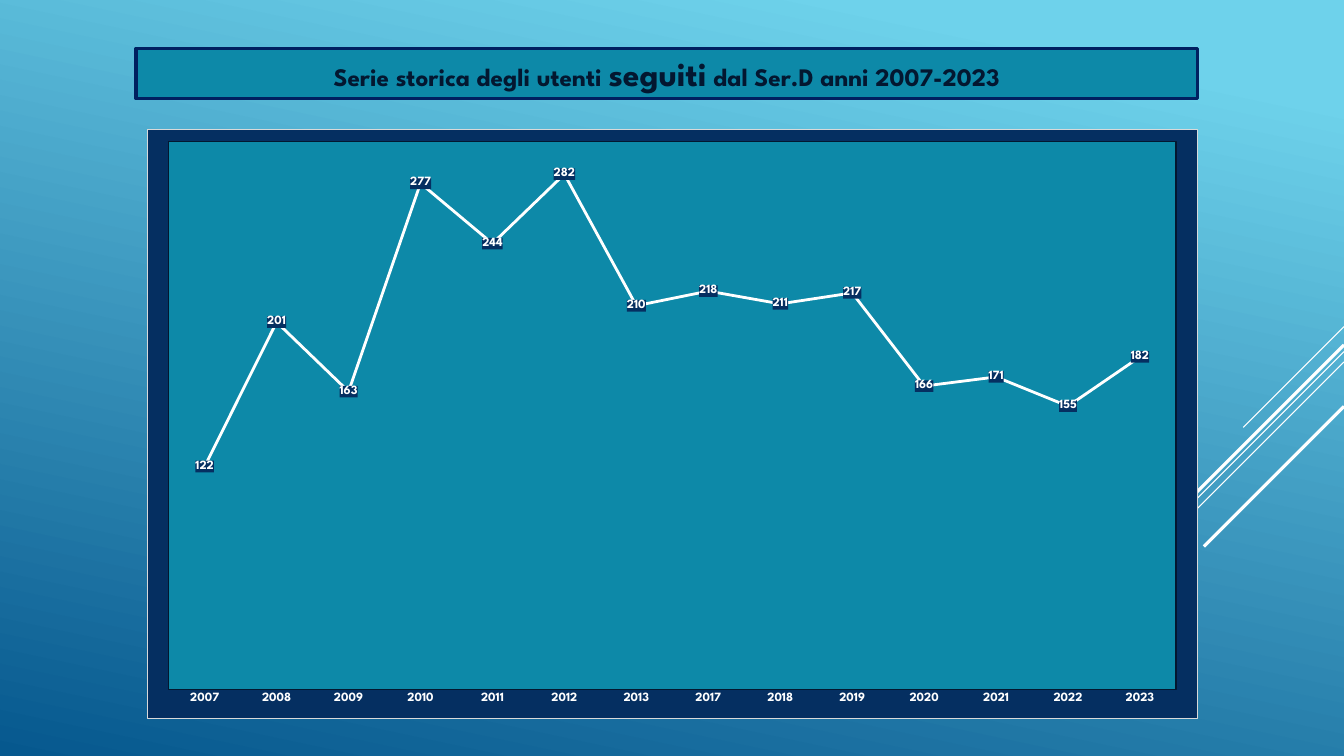
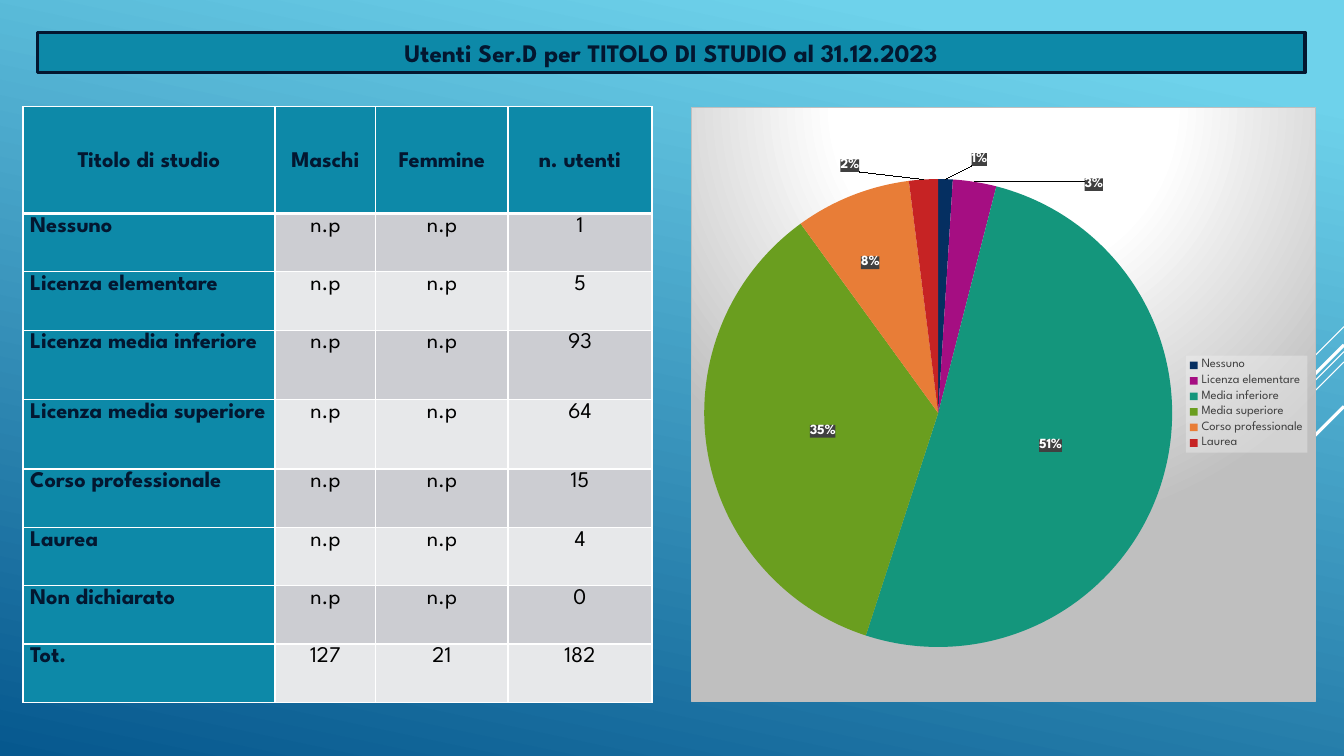
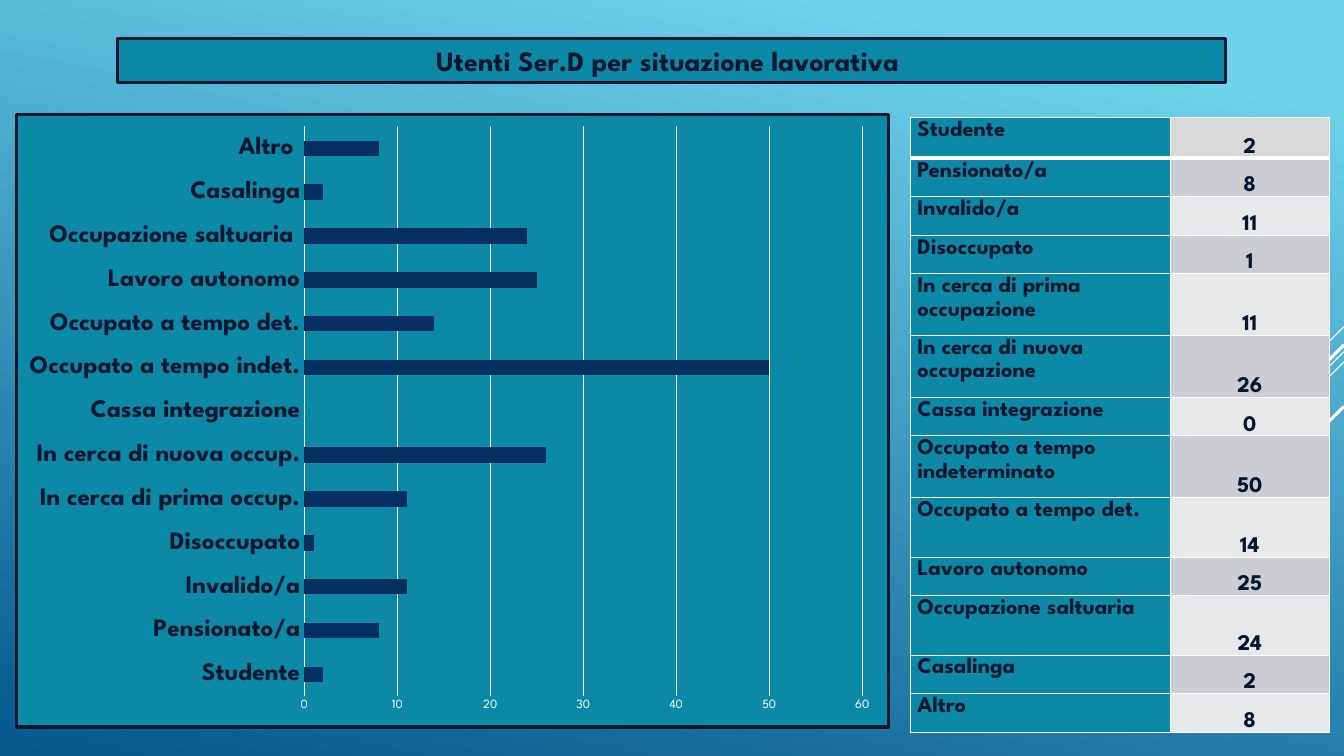
import copy
import functools

import pptx
import pptx.chart.data
import pptx.dml.color
import pptx.enum.chart
import pptx.enum.dml
import pptx.enum.shapes
import pptx.enum.text
import pptx.oxml
import pptx.util

Cm = pptx.util.Cm
Pt = pptx.util.Pt
Rgb = pptx.dml.color.RGBColor.from_string
Kind = pptx.enum.chart.XL_CHART_TYPE
Align = pptx.enum.text.PP_ALIGN
Anchor = pptx.enum.text.MSO_ANCHOR


class Theme:
    face = "League Spartan"
    teal, navy, ink = "0D89A8", "052F61", "031730"
    white, black, gray = "FFFFFF", "000000", "404040"
    sky, deep, edge = "6ED2EB", "06588E", "002060"
    bands = ("E7E8EA", "CCCDD2")
    pale, frame, rim = "D9D9D9", "BFBFBF", "D9D9D9"
    slices = ("052F61", "A50E82", "14967C", "6A9E1F", "E87D37", "C62324")
    tiny, small, cell, head, big, huge = 9, 10, 16, 18, 20, 24
    thin, thick = 0.75, 2.25


def dress(item, **looks):
    for name, value in looks.items():
        *route, last = name.split("__")
        setattr(functools.reduce(getattr, route, item), last, value)


def node(text):
    spaces = " ".join(
        f'xmlns:{key}="http://schemas.openxmlformats.org/drawingml/2006/{end}"'
        for key, end in (("a", "main"), ("c", "chart"))
    )
    return pptx.oxml.parse_xml(f"<c:root {spaces}>{text}</c:root>")[0]


solid = '<a:solidFill><a:srgbClr val="{}"/></a:solidFill>'.format
glow = (
    '<a:gradFill><a:gsLst>'
    + "".join(
        f'<a:gs pos="{spot}"><a:srgbClr val="{tone}"/></a:gs>'
        for spot, tone in ((0, Theme.white), (39000, Theme.white), (100000, Theme.frame))
    )
    + '</a:gsLst><a:path path="circle">'
    '<a:fillToRect l="50000" t="-80000" r="50000" b="180000"/></a:path></a:gradFill>'
)

deck = pptx.Presentation()
dress(deck, slide_width=Cm(33.87), slide_height=Cm(19.05))
blank = deck.slide_layouts[6]

pages = [
    {
        "title": [("Serie storica degli utenti ", Theme.head), ("seguiti", Theme.huge),
                  (" dal Ser.D anni 2007-2023", Theme.head)],
        "bar": (3.43, 1.22, 26.75, 1.27), "edge": Theme.edge, "anchor": Anchor.TOP,
        "kind": Kind.LINE, "box": (3.71, 3.25, 26.47, 14.88),
        "plot": (0.02, 0.02, 0.96, 0.93),
        "fill": solid(Theme.navy), "rim": (Theme.rim, Theme.thin),
        "data": {"2007": 122, "2008": 201, "2009": 163, "2010": 277, "2011": 244,
                 "2012": 282, "2013": 210, "2017": 218, "2018": 211, "2019": 217,
                 "2020": 166, "2021": 171, "2022": 155, "2023": 182},
    },
    {
        "title": [("Utenti Ser.D per TITOLO DI STUDIO al 31.12.2023", Theme.head)],
        "bar": (0.94, 0.81, 31.95, 1.02), "edge": Theme.ink, "anchor": Anchor.MIDDLE,
        "kind": Kind.PIE, "box": (17.42, 2.69, 15.75, 14.99),
        "plot": (0.02, 0.12, 0.75, 0.79),
        "fill": glow, "rim": (Theme.frame, Theme.thin),
        "data": {"Nessuno": 1, "Licenza elementare ": 3, "Media inferiore": 51,
                 "Media superiore": 35, "Corso professionale": 8, "Laurea": 2},
    },
    {
        "title": [("Utenti Ser.D per situazione lavorativa ", Theme.big)],
        "bar": (2.97, 0.97, 27.91, 1.12), "edge": Theme.ink, "anchor": Anchor.TOP,
        "kind": Kind.BAR_CLUSTERED, "box": (0.38, 2.84, 22.05, 15.52),
        "plot": (0.33, 0.02, 0.64, 0.93),
        "fill": solid(Theme.teal), "rim": (Theme.ink, Theme.thick),
        "data": {"Studente": 2, "Pensionato/a": 8, "Invalido/a": 11, "Disoccupato": 1,
                 "In cerca di prima occup.": 11, "In cerca di nuova occup.": 26,
                 "Cassa integrazione": 0, "Occupato a tempo indet.": 50,
                 "Occupato a tempo det.": 14, "Lavoro autonomo": 25,
                 "Occupazione saltuaria ": 24, "Casalinga": 2, "Altro ": 8},
    },
]

slides, charts = [], []
for page in pages:
    slide = deck.slides.add_slide(blank)
    slides.append(slide)

    data = pptx.chart.data.CategoryChartData()
    data.categories = list(page["data"])
    data.add_series("Series 1", list(page["data"].values()))
    chart = slide.shapes.add_chart(page["kind"], *map(Cm, page["box"]), data).chart
    charts.append(chart)
    dress(chart, has_title=False, has_legend=False, font__name=Theme.face,
          font__size=Pt(Theme.small), font__color__rgb=Rgb(Theme.white))
    tone, width = page["rim"]
    chart.element.xpath("c:chart")[0].addnext(node(
        f'<c:spPr>{page["fill"]}<a:ln w="{Pt(width)}">{solid(tone)}</a:ln></c:spPr>'))
    area = chart.element.xpath("c:chart/c:plotArea")[0]
    for old in area.xpath("c:layout"):
        area.remove(old)
    sides = "".join(f'<c:{key} val="{part}"/>' for key, part in zip("xywh", page["plot"]))
    area.insert(0, node(
        '<c:layout><c:manualLayout><c:layoutTarget val="inner"/>'
        f'<c:xMode val="edge"/><c:yMode val="edge"/>{sides}</c:manualLayout></c:layout>'))

    bar = slide.shapes.add_shape(pptx.enum.shapes.MSO_SHAPE.RECTANGLE, *map(Cm, page["bar"]))
    bar.fill.solid()
    dress(bar, shadow__inherit=False, fill__fore_color__rgb=Rgb(Theme.teal),
          line__color__rgb=Rgb(page["edge"]), line__width=Pt(Theme.thick),
          text_frame__word_wrap=True, text_frame__vertical_anchor=page["anchor"],
          text_frame__auto_size=pptx.enum.text.MSO_AUTO_SIZE.SHAPE_TO_FIT_TEXT)
    line = bar.text_frame.paragraphs[0]
    line.alignment = Align.CENTER
    for text, size in page["title"]:
        run = line.add_run()
        dress(run, text=text, font__name=Theme.face, font__size=Pt(size),
              font__bold=True, font__color__rgb=Rgb(Theme.ink))

fill = blank.background.fill
fill.gradient()
fill.gradient_angle = 258
for stop, spot, tone in zip(fill.gradient_stops, (0.1, 1), (Theme.sky, Theme.deep)):
    dress(stop, position=spot, color__rgb=Rgb(tone))

for top, reach, width in ((8.23, 2.54, Theme.thin), (8.86, 8.29, Theme.thin),
                          (9.12, 5.27, Theme.thin), (8.69, 4.86, Theme.thick),
                          (10.24, 3.53, Theme.thick)):
    ray = slides[0].shapes.add_connector(
        pptx.enum.shapes.MSO_CONNECTOR.STRAIGHT,
        Cm(33.87), Cm(top), Cm(33.87 - reach), Cm(top + reach))
    dress(ray, line__color__rgb=Rgb(Theme.white), line__width=Pt(width))
    ray.element.spPr.append(node("<a:effectLst/>"))
    blank.shapes.element.append(ray.element)

trend, pie, work = charts
none = pptx.enum.chart.XL_TICK_MARK.NONE
for chart, size, tone, top in ((trend, Theme.tiny, Theme.white, 300),
                               (work, Theme.head, Theme.ink, 60)):
    dress(chart.plots[0], vary_by_categories=False)
    dress(chart.category_axis, major_tick_mark=none, has_major_gridlines=False,
          tick_labels__font__name=Theme.face, tick_labels__font__size=Pt(size),
          tick_labels__font__bold=True, tick_labels__font__color__rgb=Rgb(tone))
    dress(chart.value_axis, major_tick_mark=none, minimum_scale=0, maximum_scale=top,
          has_major_gridlines=chart is work)

trend.category_axis.format.line.fill.background()
trend.value_axis.visible = False
dress(trend.plots[0].series[0], smooth=False, format__line__width=Pt(2),
      format__line__color__rgb=Rgb(Theme.white))
trend.element.xpath("c:chart/c:plotArea")[0].append(node(
    f'<c:spPr>{solid(Theme.teal)}<a:ln w="{Pt(Theme.thin)}">{solid(Theme.ink)}</a:ln></c:spPr>'))

white = Rgb(Theme.white)
dress(work.category_axis.format.line, color__rgb=white, width=Pt(Theme.thin))
dress(work.value_axis, major_unit=10, tick_labels__font__name=Theme.face,
      tick_labels__font__size=Pt(Theme.tiny), tick_labels__font__color__rgb=white)
dress(work.value_axis.major_gridlines.format.line, color__rgb=white, width=Pt(Theme.thin))
work.value_axis.format.line.fill.background()
work.plots[0].gap_width = 182
jobs = work.plots[0].series[0]
jobs.invert_if_negative = False
jobs.format.fill.solid()
jobs.format.fill.fore_color.rgb = Rgb(Theme.navy)

pie.plots[0].vary_by_categories = True
for rank, tone in enumerate(Theme.slices):
    paint = pie.plots[0].series[0].points[rank].format.fill
    paint.solid()
    paint.fore_color.rgb = Rgb(tone)
pie.has_legend = True
dress(pie.legend, position=pptx.enum.chart.XL_LEGEND_POSITION.RIGHT,
      include_in_layout=False, font__name=Theme.face, font__size=Pt(Theme.tiny),
      font__color__rgb=Rgb(Theme.gray))
pie.element.xpath("c:chart/c:legend/c:txPr")[0].addprevious(node(
    '<c:spPr><a:solidFill><a:srgbClr val="F2F2F2"><a:alpha val="39000"/></a:srgbClr>'
    '</a:solidFill></c:spPr>'))

for chart, size, tone, share in ((trend, Theme.tiny, Theme.navy, False),
                                 (pie, Theme.small, Theme.gray, True)):
    tags = chart.plots[0].series[0].data_labels
    dress(tags, show_value=not share, show_percentage=share,
          number_format="0%" if share else "0", number_format_is_linked=False,
          position=pptx.enum.chart.XL_LABEL_POSITION.CENTER, font__name=Theme.face,
          font__size=Pt(size), font__bold=True, font__color__rgb=white)
    chart.element.xpath(".//c:ser/c:dLbls/c:txPr")[0].addprevious(
        node(f"<c:spPr>{solid(tone)}</c:spPr>"))

group = pie.element.xpath(".//c:ser/c:dLbls")[0]
shared = [part for part in group if not part.tag.endswith("eaderLines")]
shifts = {0: (0.06, -0.23), 1: (0.22, -0.19), 4: (-0.04, -0.07), 5: (-0.13, -0.22)}
for place, (rank, (right, down)) in enumerate(shifts.items()):
    tag = node(
        f'<c:dLbl><c:idx val="{rank}"/><c:layout><c:manualLayout>'
        f'<c:x val="{right}"/><c:y val="{down}"/></c:manualLayout></c:layout></c:dLbl>')
    tag.extend(copy.deepcopy(shared))
    group.insert(place, tag)

grids = [
    {
        "slide": slides[1], "spot": (0.58, 2.69), "cols": (6.35, 2.54, 3.33, 3.63),
        "tall": (2.69, 1.47, 1.47, 1.75, 1.75, 1.47, 1.47, 1.47, 1.47),
        "head": True, "top": Theme.teal, "anchor": Anchor.TOP,
        "tone": Theme.black, "bold": False,
        "rows": [
            ("Titolo di studio", "Maschi", "Femmine", "n. utenti"),
            ("Nessuno", "n.p", "n.p", "1"),
            ("Licenza elementare", "n.p", "n.p", "5"),
            ("Licenza media inferiore", "n.p", "n.p", "93"),
            ("Licenza media superiore", "n.p", "n.p", "64"),
            ("Corso professionale", "n.p", "n.p", "15"),
            ("Laurea", "n.p", "n.p", "4"),
            ("Non dichiarato", "n.p", "n.p", "0"),
            ("Tot.", "127", "21", "182"),
        ],
    },
    {
        "slide": slides[2], "spot": (22.94, 2.97), "cols": (6.55, 4.01),
        "tall": (1.02, 0.97, 0.97, 0.97, 1.5, 1.5, 0.97, 1.5, 1.5, 0.97, 1.5, 0.97, 0.97),
        "head": False, "top": Theme.pale, "anchor": Anchor.BOTTOM,
        "tone": Theme.ink, "bold": True,
        "rows": [
            ("Studente", "2"), ("Pensionato/a", "8"), ("Invalido/a", "11"),
            ("Disoccupato", "1"), ("In cerca di prima occupazione", "11"),
            ("In cerca di nuova occupazione", "26"), ("Cassa integrazione", "0"),
            ("Occupato a tempo indeterminato", "50"), ("Occupato a tempo det.", "14"),
            ("Lavoro autonomo", "25"), ("Occupazione saltuaria", "24"),
            ("Casalinga", "2"), ("Altro", "8"),
        ],
    },
]

for grid in grids:
    size = (sum(grid["cols"]), sum(grid["tall"]))
    table = grid["slide"].shapes.add_table(
        len(grid["rows"]), len(grid["cols"]), *map(Cm, grid["spot"] + size)).table
    table.horz_banding = False
    for col, width in zip(table.columns, grid["cols"]):
        col.width = Cm(width)
    for high, (row, words) in enumerate(zip(table.rows, grid["rows"])):
        row.height = Cm(grid["tall"][high])
        for wide, (cell, text) in enumerate(zip(row.cells, words)):
            head = grid["head"] and high == 0
            label = wide == 0 or head
            back = grid["top"] if high == 0 else Theme.bands[high % 2]
            cell.text = text
            cell.fill.solid()
            dress(cell, fill__fore_color__rgb=Rgb(Theme.teal if label else back),
                  margin_left=Cm(0.18), margin_right=Cm(0.18), margin_top=0, margin_bottom=0,
                  vertical_anchor=Anchor.MIDDLE if head
                  else Anchor.TOP if label else grid["anchor"])
            line = cell.text_frame.paragraphs[0]
            dress(line, line_spacing=1.15, space_after=Pt(10),
                  alignment=Align.CENTER if head or wide else Align.LEFT)
            dress(line.runs[0].font, name=Theme.face, size=Pt(Theme.cell),
                  bold=label or grid["bold"],
                  color__rgb=Rgb(Theme.ink if label else grid["tone"]))
            props = cell.fill.fore_color and cell._tc.get_or_add_tcPr()
            for place, side in enumerate("LRTB"):
                heavy = (side, high) in (("B", 0), ("T", 1))
                props.insert(place, node(
                    f'<a:ln{side} w="{Pt(3 if heavy else 1)}">{solid(Theme.white)}</a:ln{side}>'))

deck.save("out.pptx")
